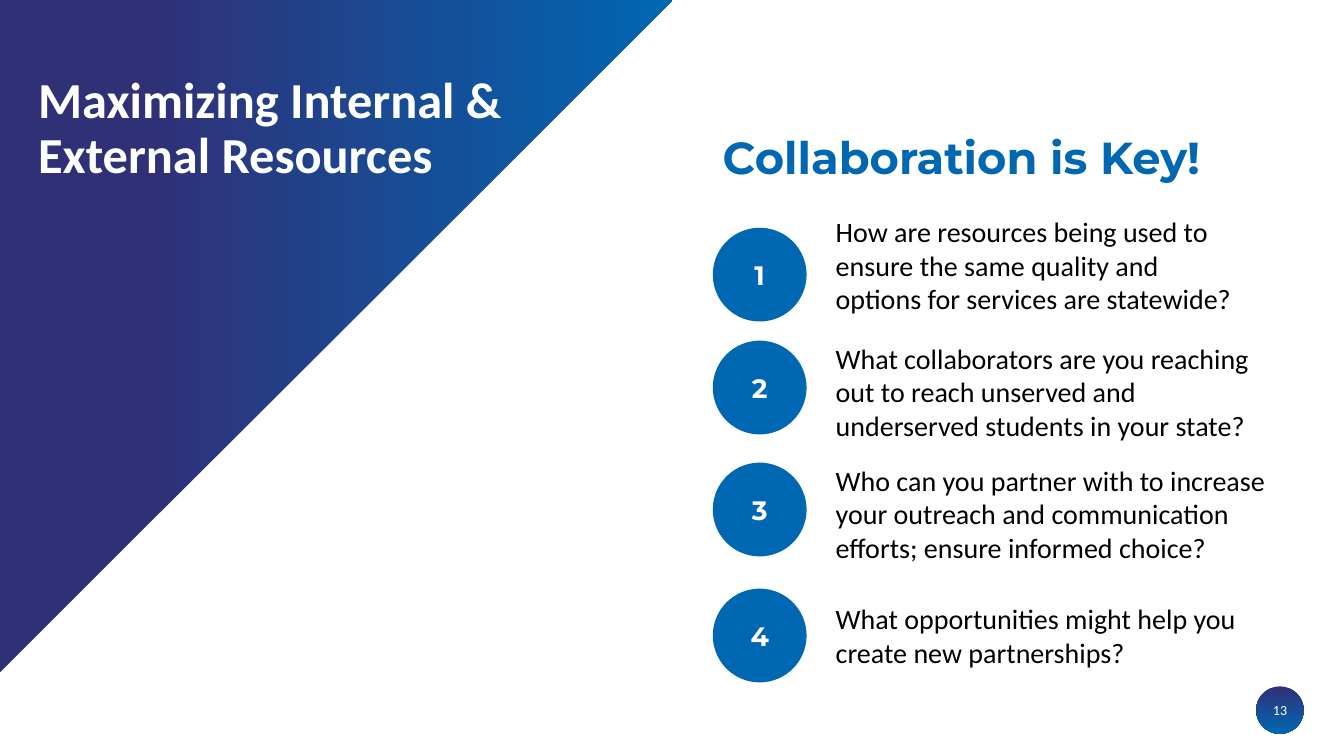
from dataclasses import dataclass

from pptx import Presentation
from pptx.dml.color import RGBColor
from pptx.enum.shapes import MSO_SHAPE
from pptx.enum.text import MSO_ANCHOR, PP_ALIGN
from pptx.util import Inches, Pt

OVAL = MSO_SHAPE.OVAL
RIGHT_TRIANGLE = MSO_SHAPE.RIGHT_TRIANGLE
TOP, MIDDLE = MSO_ANCHOR.TOP, MSO_ANCHOR.MIDDLE
LEFT, CENTER = PP_ALIGN.LEFT, PP_ALIGN.CENTER


@dataclass(frozen=True)
class Theme:
    navy: RGBColor = RGBColor(0x30, 0x30, 0x77)
    blue: RGBColor = RGBColor(0x00, 0x67, 0xB2)
    white: RGBColor = RGBColor(0xFF, 0xFF, 0xFF)
    black: RGBColor = RGBColor(0x00, 0x00, 0x00)
    body_font: str = "Calibri"
    accent_font: str = "Montserrat"
    title_size: int = 36
    heading_size: int = 32
    body_size: int = 20
    badge_size: int = 19
    page_size: int = 10


class SlideBuilder:
    def __init__(self, slide, theme):
        self.slide = slide
        self.theme = theme

    def set_text(self, shape, text, font_name, size, color, bold=False,
                 align=LEFT, anchor=MIDDLE, line_spacing=1.0):
        frame = shape.text_frame
        frame.word_wrap = True
        frame.vertical_anchor = anchor
        paragraph = frame.paragraphs[0]
        paragraph.text = text
        paragraph.alignment = align
        paragraph.line_spacing = line_spacing
        font = paragraph.font
        font.name = font_name
        font.size = Pt(size)
        font.bold = bold
        font.color.rgb = color

    def text(self, box, text, font_name, size, color, **style):
        shape = self.slide.shapes.add_textbox(*map(Inches, box))
        self.set_text(shape, text, font_name, size, color, **style)

    def shape(self, kind, box):
        shape = self.slide.shapes.add_shape(kind, *map(Inches, box))
        shape.shadow.inherit = False
        shape.line.fill.background()
        return shape

    def gradient_shape(self, kind, box, angle, start=0.0, rotation=0):
        shape = self.shape(kind, box)
        shape.rotation = rotation
        shape.fill.gradient()
        shape.fill.gradient_angle = angle
        first, last = shape.fill.gradient_stops
        first.position, last.position = start, 1.0
        first.color.rgb, last.color.rgb = self.theme.navy, self.theme.blue

    def badge(self, box, number):
        shape = self.shape(OVAL, box)
        shape.fill.solid()
        shape.fill.fore_color.rgb = self.theme.blue
        self.set_text(shape, str(number), self.theme.accent_font,
                      self.theme.badge_size, self.theme.white,
                      bold=True, align=CENTER)


QUESTIONS = [
    (2.26, (2.06, 4.22, 1.14),
     "How are resources being used to ensure the same quality and options "
     "for services are statewide?"),
    (3.38, (3.39, 4.46, 0.99),
     "What collaborators are you reaching out to reach unserved and "
     "underserved students in your state?"),
    (4.59, (4.48, 4.75, 1.23),
     "Who can you partner with to increase your outreach and communication "
     "efforts; ensure informed choice?"),
    (5.84, (5.69, 4.75, 1.23),
     "What opportunities might help you create new partnerships?"),
]


def main():
    presentation = Presentation()
    presentation.slide_width = Inches(13.33)
    presentation.slide_height = Inches(7.5)
    slide = presentation.slides.add_slide(presentation.slide_layouts[6])
    theme = Theme()
    builder = SlideBuilder(slide, theme)

    builder.gradient_shape(OVAL, (12.46, 6.81, 0.47, 0.47), angle=270)
    builder.text((12.35, 6.91, 0.69, 0.44), "13", theme.body_font,
                 theme.page_size, theme.white, align=CENTER, anchor=TOP)
    builder.gradient_shape(RIGHT_TRIANGLE, (0, 0, 6.67, 6.67), angle=90,
                           start=0.21, rotation=90)
    builder.text((0.28, 0.4, 5.15, 1.77),
                 "Maximizing Internal & External Resources", theme.body_font,
                 theme.title_size, theme.white, bold=True, line_spacing=0.9)
    builder.text((7.07, 1.12, 5.34, 0.93), "Collaboration is Key!",
                 theme.accent_font, theme.heading_size, theme.blue,
                 bold=True, line_spacing=0.9)

    for number, (badge_top, (top, width, height), question) in enumerate(
            QUESTIONS, start=1):
        builder.badge((7.07, badge_top, 0.93, 0.93), number)
        builder.text((8.19, top, width, height), question, theme.body_font,
                     theme.body_size, theme.black)

    presentation.save("out.pptx")


if __name__ == "__main__":
    main()
